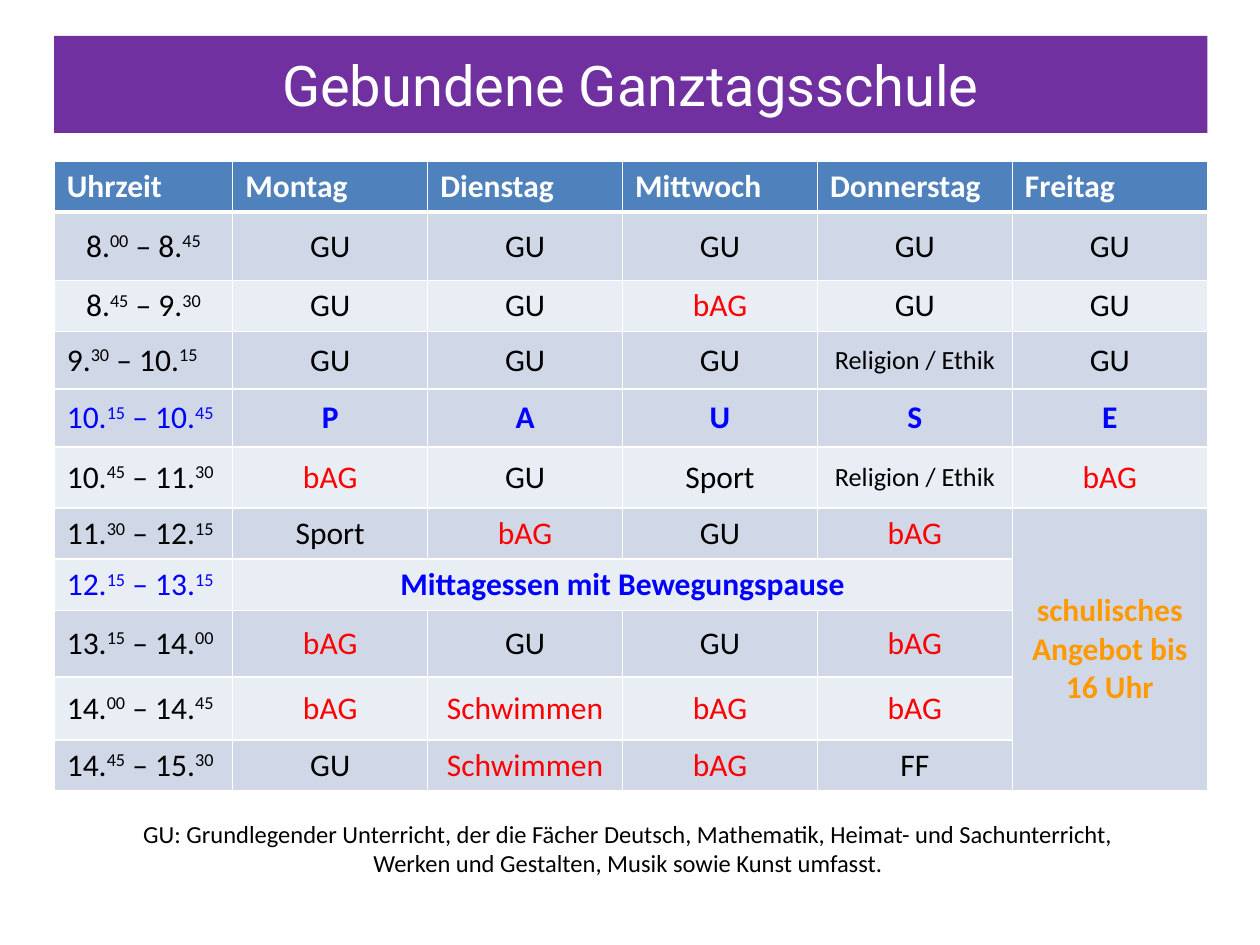
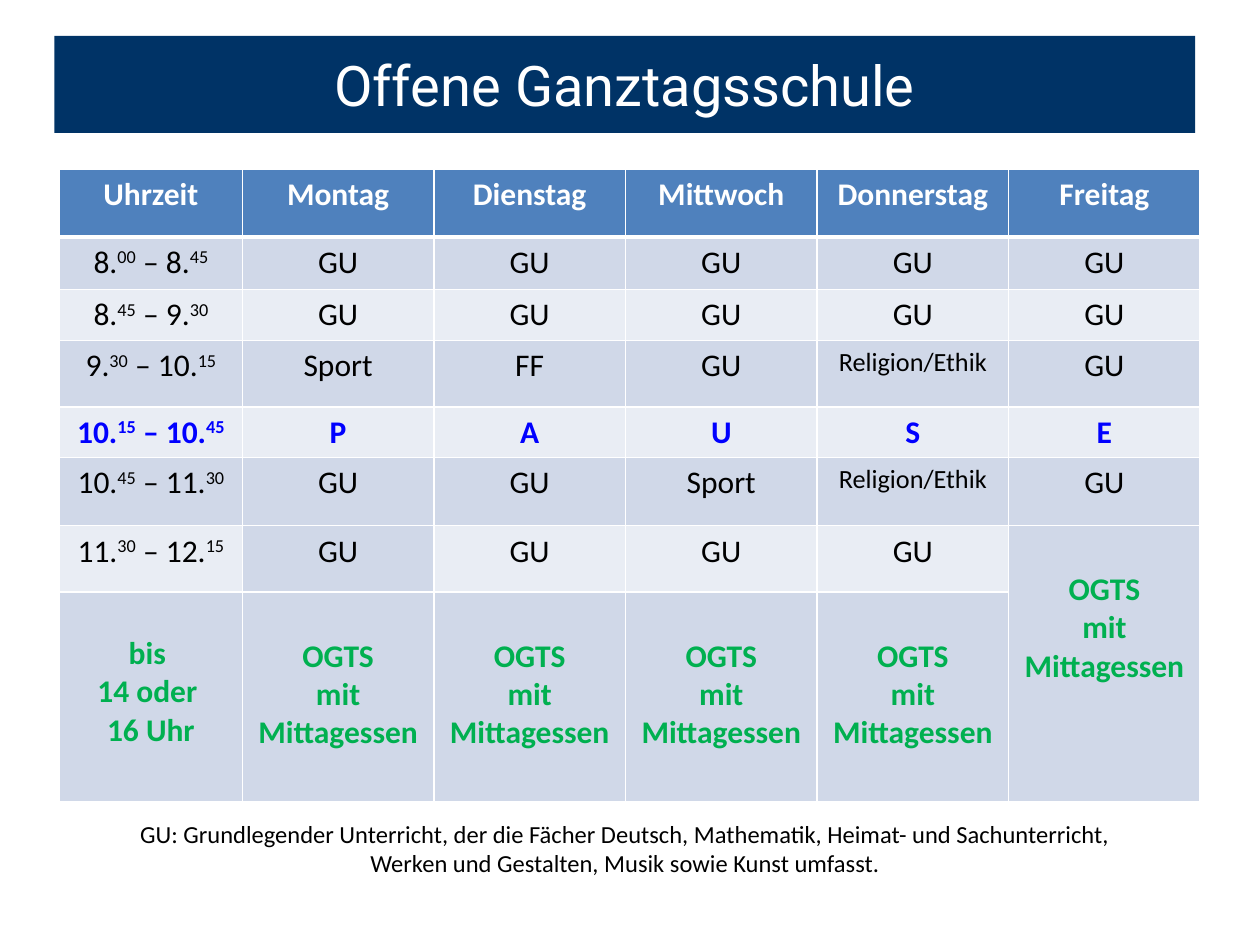
from dataclasses import dataclass

from lxml import etree
from pptx import Presentation
from pptx import util as u
from pptx.dml import color
from pptx.enum import shapes, text
from pptx.oxml import ns

NOTE = (
    "GU: Grundlegender Unterricht, der die Fächer Deutsch, Mathematik, Heimat- und Sachunterricht, \n"
    "Werken und Gestalten, Musik sowie Kunst umfasst. "
)
HEADINGS = ["Uhrzeit", "Montag", "Dienstag", "Mittwoch", "Donnerstag", "Freitag"]
LUNCH = "Mittagessen mit Bewegungspause"
FRIDAY = "schulisches Angebot bis 16 Uhr"
OPEN_CARE = "OGTS\nmit Mittagessen"
CARE_HOURS = "bis \n14 oder \n16 Uhr"

TIMETABLES = [
    {
        "title": "Gebundene Ganztagsschule",
        "band": "7030A0",
        "title_place": (31, 20.5, 659, 55.5),
        "table_place": (31, 92),
        "table_width": 659,
        "time_width": 102,
        "note_place": (31, 464.5, 659, 41),
        "anchor": text.MSO_ANCHOR.MIDDLE,
        "left_rows": [0, 3, 4, 5, 6, 7, 8, 9, 10],
        "left_columns": {0: range(6)},
        "bold_pause_time": False,
        "row_heights": [28, 39, 29, 33, 33, 35, 29, 29, 38, 36, 29],
        "shades": "DLDDLDLDLD",
        "dark_cells": [],
        "merges": [((6, 5), (10, 5)), ((7, 1), (7, 4))],
        "rows": [
            ["8.00 – 8.45", "GU", "GU", "GU", "GU", "GU"],
            ["8.45 – 9.30", "GU", "GU", "bAG", "GU", "GU"],
            ["9.30 – 10.15", "GU", "GU", "GU", "Religion / Ethik", "GU"],
            ["10.15 – 10.45", "P", "A", "U", "S", "E"],
            ["10.45 – 11.30", "bAG", "GU", "Sport", "Religion / Ethik", "bAG"],
            ["11.30 – 12.15", "Sport", "bAG", "GU", "bAG", FRIDAY],
            ["12.15 – 13.15", LUNCH, "", "", "", ""],
            ["13.15 – 14.00", "bAG", "GU", "GU", "bAG", ""],
            ["14.00 – 14.45", "bAG", "Schwimmen", "bAG", "bAG", ""],
            ["14.45 – 15.30", "GU", "Schwimmen", "bAG", "FF", ""],
        ],
    },
    {
        "title": "Offene Ganztagsschule",
        "band": "003366",
        "title_place": (31, 20.5, 652, 55.5),
        "table_place": (34, 96.5),
        "table_width": 652,
        "time_width": 104.5,
        "note_place": (34, 464.5, 649.5, 41),
        "anchor": text.MSO_ANCHOR.TOP,
        "left_rows": [],
        "left_columns": {},
        "bold_pause_time": True,
        "row_heights": [39, 30, 29, 38, 29, 39, 38, 120],
        "shades": "DLDLDLD",
        "dark_cells": [(6, 1), (6, 5)],
        "merges": [((6, 5), (7, 5))],
        "rows": [
            ["8.00 – 8.45", "GU", "GU", "GU", "GU", "GU"],
            ["8.45 – 9.30", "GU", "GU", "GU", "GU", "GU"],
            ["9.30 – 10.15", "Sport", "FF", "GU", "Religion/Ethik", "GU"],
            ["10.15 – 10.45", "P", "A", "U", "S", "E"],
            ["10.45 – 11.30", "GU", "GU", "Sport", "Religion/Ethik", "GU"],
            ["11.30 – 12.15", "GU", "GU", "GU", "GU", OPEN_CARE],
            [CARE_HOURS] + [OPEN_CARE] * 4 + [""],
        ],
    },
]


@dataclass(frozen=True)
class Theme:
    title_font: str = "Roboto"
    body_font: str = "Calibri"
    title_size: float = 32
    body_size: float = 18
    small_size: float = 15
    note_size: float = 14
    white: str = "FFFFFF"
    black: str = "000000"
    header: str = "4F81BD"
    dark: str = "D0D8E8"
    light: str = "E9EDF4"
    red: str = "FF0000"
    blue: str = "0000FF"
    orange: str = "FF9900"
    green: str = "00B050"
    line: float = 1
    header_line: float = 3


THEME = Theme()
BREAKS = ("10.15 – 10.45", "12.15 – 13.15")
WORD_FORMATS = {
    "bAG": {"tint": THEME.red},
    "Schwimmen": {"tint": THEME.red},
    "Religion / Ethik": {"size": THEME.small_size},
    "Religion/Ethik": {"size": THEME.small_size},
    FRIDAY: {"tint": THEME.orange, "bold": True},
    OPEN_CARE: {"tint": THEME.green, "bold": True},
    CARE_HOURS: {"tint": THEME.green, "bold": True},
    **{word: {"tint": THEME.blue, "bold": True} for word in (*"PAUSE", LUNCH)},
}
TOP_MARGINS = {OPEN_CARE: 25.6, CARE_HOURS: 24}


def apply(target, formats):
    for name, value in formats.items():
        setattr(target, name, value)


def rgb(value):
    return color.RGBColor.from_string(value)


def points(values):
    return [u.Pt(value) for value in values]


def paint(target, tint):
    target.fill.solid()
    target.fill.fore_color.rgb = rgb(tint)


def add_span(para, words, tint=THEME.black, size=THEME.body_size,
             bold=False, face=THEME.body_font, raised=False):
    span = para.add_run()
    span.text = words
    apply(span.font, {"name": face, "size": u.Pt(size), "bold": bold})
    span.font.color.rgb = rgb(tint)
    if raised:
        span._r.get_or_add_rPr().set("baseline", "30000")


def write(frame, words, align=text.PP_ALIGN.CENTER, **formats):
    for number, line in enumerate(words.split("\n")):
        para = frame.add_paragraph() if number else frame.paragraphs[0]
        para.alignment = align
        add_span(para, line, **formats)


def write_time(frame, times, align, **formats):
    para = frame.paragraphs[0]
    para.alignment = align
    start, end = times.split(" – ")
    for lead, clock in (("", start), (" – ", end)):
        hour, minute = clock.split(".")
        add_span(para, f"{lead}{hour}.", **formats)
        add_span(para, minute, raised=True, **formats)


def add_borders(cell, row):
    properties = cell._tc.get_or_add_tcPr()
    widths = {
        "L": THEME.line,
        "R": THEME.line,
        "T": THEME.header_line if row == 1 else THEME.line,
        "B": THEME.header_line if row == 0 else THEME.line,
    }
    for side, width in widths.items():
        line = etree.SubElement(properties, ns.qn(f"a:ln{side}"), w=str(u.Pt(width)))
        fill = etree.SubElement(line, ns.qn("a:solidFill"))
        etree.SubElement(fill, ns.qn("a:srgbClr"), val=THEME.white)


def cell_tint(plan, row, column):
    if row == 0:
        return THEME.header
    if (row, column) in plan["dark_cells"] or plan["shades"][row - 1] == "D":
        return THEME.dark
    return THEME.light


def fill_cell(cell, plan, row, column, words):
    add_borders(cell, row)
    paint(cell, cell_tint(plan, row, column))
    cell.vertical_anchor = text.MSO_ANCHOR.TOP if words == LUNCH else plan["anchor"]
    if words in TOP_MARGINS:
        cell.margin_top = u.Pt(TOP_MARGINS[words])
    left = row in plan["left_rows"] and column in plan["left_columns"].get(row, [0])
    align = text.PP_ALIGN.LEFT if left else text.PP_ALIGN.CENTER
    if row == 0:
        write(cell.text_frame, words, align, tint=THEME.white, bold=True)
    elif " – " in words:
        pause = words in BREAKS
        write_time(cell.text_frame, words, align,
                   tint=THEME.blue if pause else THEME.black,
                   bold=pause and plan["bold_pause_time"])
    elif words:
        write(cell.text_frame, words, align, **WORD_FORMATS.get(words, {}))


def add_title(page, plan):
    box = page.shapes.add_shape(shapes.MSO_SHAPE.RECTANGLE, *points(plan["title_place"]))
    box.shadow.inherit = False
    box.line.fill.background()
    paint(box, plan["band"])
    apply(box.text_frame, {"word_wrap": True, "vertical_anchor": text.MSO_ANCHOR.MIDDLE})
    write(box.text_frame, plan["title"], tint=THEME.white,
          size=THEME.title_size, face=THEME.title_font)


def add_timetable(page, plan):
    rows = [HEADINGS] + plan["rows"]
    heights = plan["row_heights"]
    place = (*plan["table_place"], plan["table_width"], sum(heights))
    table = page.shapes.add_table(len(rows), len(HEADINGS), *points(place)).table
    table.horz_banding = False
    day_width = (plan["table_width"] - plan["time_width"]) / (len(HEADINGS) - 1)
    for number, column in enumerate(table.columns):
        column.width = u.Pt(day_width if number else plan["time_width"])
    for row, words in enumerate(rows):
        table.rows[row].height = u.Pt(heights[row])
        for column, word in enumerate(words):
            fill_cell(table.cell(row, column), plan, row, column, word)
    for first, last in plan["merges"]:
        table.cell(*first).merge(table.cell(*last))


def add_note(page, plan):
    box = page.shapes.add_textbox(*points(plan["note_place"]))
    box.text_frame.word_wrap = True
    write(box.text_frame, NOTE, size=THEME.note_size)


def main():
    deck = Presentation()
    apply(deck, {"slide_width": u.Pt(720), "slide_height": u.Pt(540)})
    for plan in TIMETABLES:
        page = deck.slides.add_slide(deck.slide_layouts[6])
        add_title(page, plan)
        add_timetable(page, plan)
        add_note(page, plan)
    deck.save("out.pptx")


if __name__ == "__main__":
    main()
